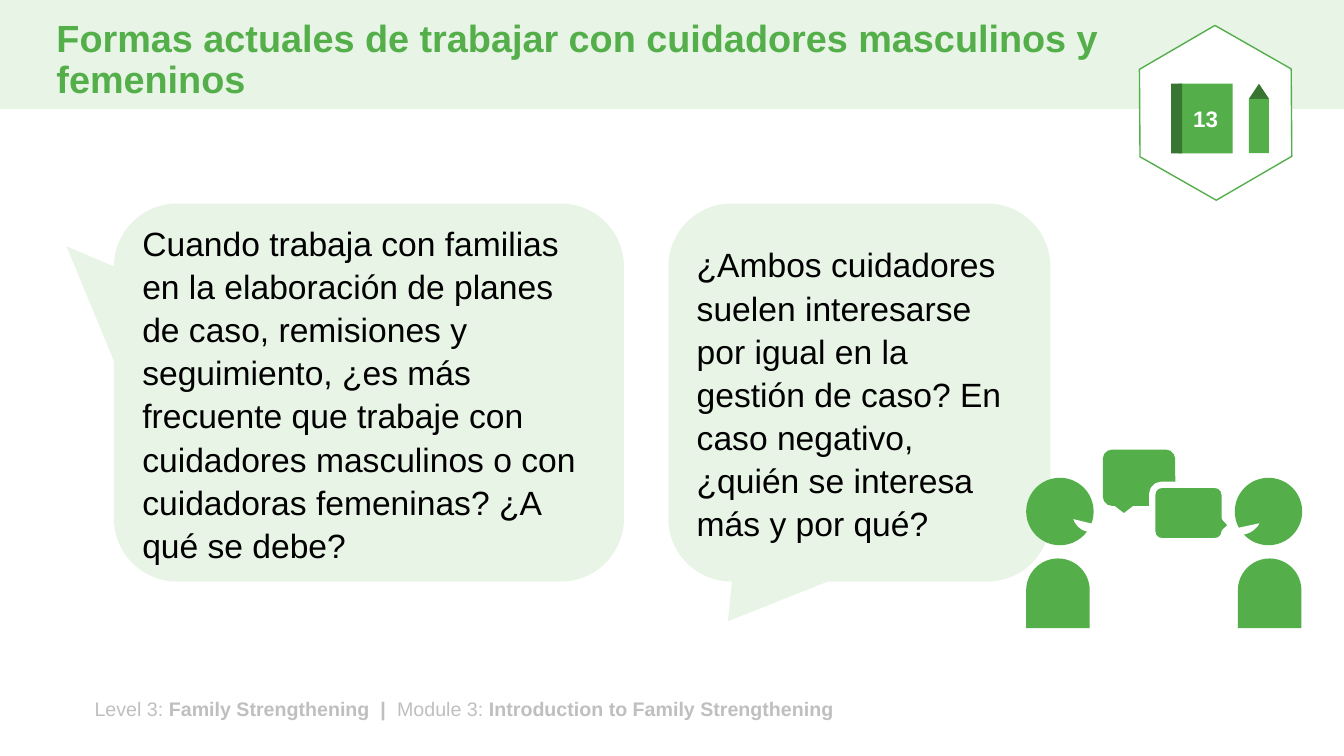
from typing import NamedTuple, Optional

from pptx import Presentation
from pptx.dml.color import RGBColor
from pptx.enum import shapes, text
from pptx.util import Pt

GREEN, DARK, PALE = "54AF4B", "387532", "E8F4E6"
WHITE, BLACK, GREY = "FFFFFF", "000000", "BFBFBF"
KIND = shapes.MSO_SHAPE
CALL = KIND.ROUNDED_RECTANGULAR_CALLOUT


class Box(NamedTuple):
    left: float
    top: float
    width: float
    height: float


class Part(NamedTuple):
    kind: KIND
    box: Box
    fill: str = GREEN
    adjust: tuple[float, ...] = ()
    line: Optional[str] = None
    weight: float = 1
    turn: float = 0


class Bubble(NamedTuple):
    box: Box
    tail: tuple[float, float]
    words: str


def color(code: str) -> RGBColor:
    return RGBColor.from_string(code)


def draw(slide, part: Part):
    shape = slide.shapes.add_shape(part.kind, *map(Pt, part.box))
    shape.shadow.inherit = False
    shape.fill.solid()
    shape.fill.fore_color.rgb = color(part.fill)
    if part.line:
        shape.line.color.rgb = color(part.line)
        shape.line.width = Pt(part.weight)
    else:
        shape.line.fill.background()
    for i, value in enumerate(part.adjust):
        shape.adjustments[i] = value
    shape.rotation = part.turn
    return shape


def write(para, words: str, size: float, code: str, bold: bool = False) -> None:
    run = para.add_run()
    run.text = words
    run.font.name = "Arial"
    run.font.size = Pt(size)
    run.font.bold = bold
    run.font.color.rgb = color(code)


def head(slide) -> None:
    """Fill the title and lay the pale band behind it."""
    title = slide.shapes.title
    title.left, title.top, title.width, title.height = map(
        Pt, Box(33.1, 9.4, 828, 68.4))
    frame = title.text_frame
    frame.word_wrap = True
    frame.auto_size = text.MSO_AUTO_SIZE.NONE
    frame.vertical_anchor = text.MSO_ANCHOR.MIDDLE
    para = frame.paragraphs[0]
    para.alignment = text.PP_ALIGN.LEFT
    para.line_spacing = 0.9
    write(para, "Formas actuales de trabajar con cuidadores masculinos y femeninos",
          27, GREEN, True)
    band = draw(slide, Part(KIND.RECTANGLE, Box(0, 0, 960, 77.8), PALE))
    title.element.addprevious(band.element)


def foot(slide) -> None:
    area = slide.shapes.add_textbox(*map(Pt, Box(60.5, 494.6, 765, 24.5)))
    area.text_frame.word_wrap = True
    para = area.text_frame.paragraphs[0]
    for words, bold in (("Level 3: ", False),
                        ("Family Strengthening  |  ", True),
                        ("Module 3: ", False),
                        ("Introduction to Family Strengthening", True)):
        write(para, words, 14, GREY, bold)


def badge(slide) -> None:
    """Draw the hexagon with the numbered book and the pencil."""
    top, tall = 59.8, 49.7
    draw(slide, Part(KIND.HEXAGON, Box(805.7, 26.6, 125.3, 108), WHITE,
                     (0.29, 1.155), GREEN, 1, 29.7))
    book = draw(slide, Part(KIND.RECTANGLE, Box(841.7, top, 38.9, tall)))
    frame = book.text_frame
    frame.word_wrap = False
    frame.vertical_anchor = text.MSO_ANCHOR.MIDDLE
    frame.paragraphs[0].alignment = text.PP_ALIGN.CENTER
    write(frame.paragraphs[0], "13", 16, WHITE, True)
    for part in (
        Part(KIND.RECTANGLE, Box(836.6, top, 7.9, tall), DARK),
        Part(KIND.ISOSCELES_TRIANGLE, Box(892.1, top, 14.4, 10.8), DARK),
        Part(KIND.RECTANGLE, Box(892.1, top + 10.8, 14.4, tall - 10.8)),
    ):
        draw(slide, part)


def speak(slide, bubble: Bubble) -> None:
    shape = draw(slide, Part(CALL, bubble.box, PALE, (*bubble.tail, 0.167)))
    frame = shape.text_frame
    frame.word_wrap = True
    frame.vertical_anchor = text.MSO_ANCHOR.MIDDLE
    para = frame.paragraphs[0]
    para.alignment = text.PP_ALIGN.LEFT
    para.line_spacing = 1.07
    para.space_after = Pt(8)
    write(para, bubble.words, 24, BLACK)


def people(slide) -> None:
    """Draw two people in talk."""
    for left in (733, 882):
        draw(slide, Part(KIND.OVAL, Box(left, 341.3, 48.2, 48.2)))
    for left in (733, 884.2):
        draw(slide, Part(KIND.ROUND_2_SAME_RECTANGLE,
                         Box(left, 398.9, 45.4, 49.7), GREEN, (0.5, 0)))
    for part in (
        Part(KIND.CHORD, Box(766.1, 353.5, 26.6, 26.6), WHITE, (27, 97.34)),
        Part(KIND.CHORD, Box(868.3, 355.7, 32.4, 26.6), WHITE, (10.66, 81)),
        Part(CALL, Box(787.7, 321.1, 51.8, 40.3)),
        Part(CALL, Box(823, 346.3, 51.8, 40.3), GREEN,
             (0.598, 0.219, 0.167), WHITE, 4.5),
    ):
        draw(slide, part)


BUBBLES = (
    Bubble(Box(81.4, 145.4, 364.3, 270), (-0.593, -0.387),
           "Cuando trabaja con familias en la elaboración de planes de caso, "
           "remisiones y seguimiento, ¿es más frecuente que trabaje con "
           "cuidadores masculinos o con cuidadoras femeninas? ¿A qué se debe?"),
    Bubble(Box(477.4, 145.4, 272.9, 270), (-0.344, 0.605),
           "¿Ambos cuidadores suelen interesarse por igual en la gestión de "
           "caso? En caso negativo, ¿quién se interesa más y por qué?"),
)


def main() -> None:
    deck = Presentation()
    deck.slide_width, deck.slide_height = Pt(960), Pt(540)
    slide = deck.slides.add_slide(deck.slide_layouts[5])
    head(slide)
    foot(slide)
    badge(slide)
    for bubble in BUBBLES:
        speak(slide, bubble)
    people(slide)
    deck.save("out.pptx")


if __name__ == "__main__":
    main()
